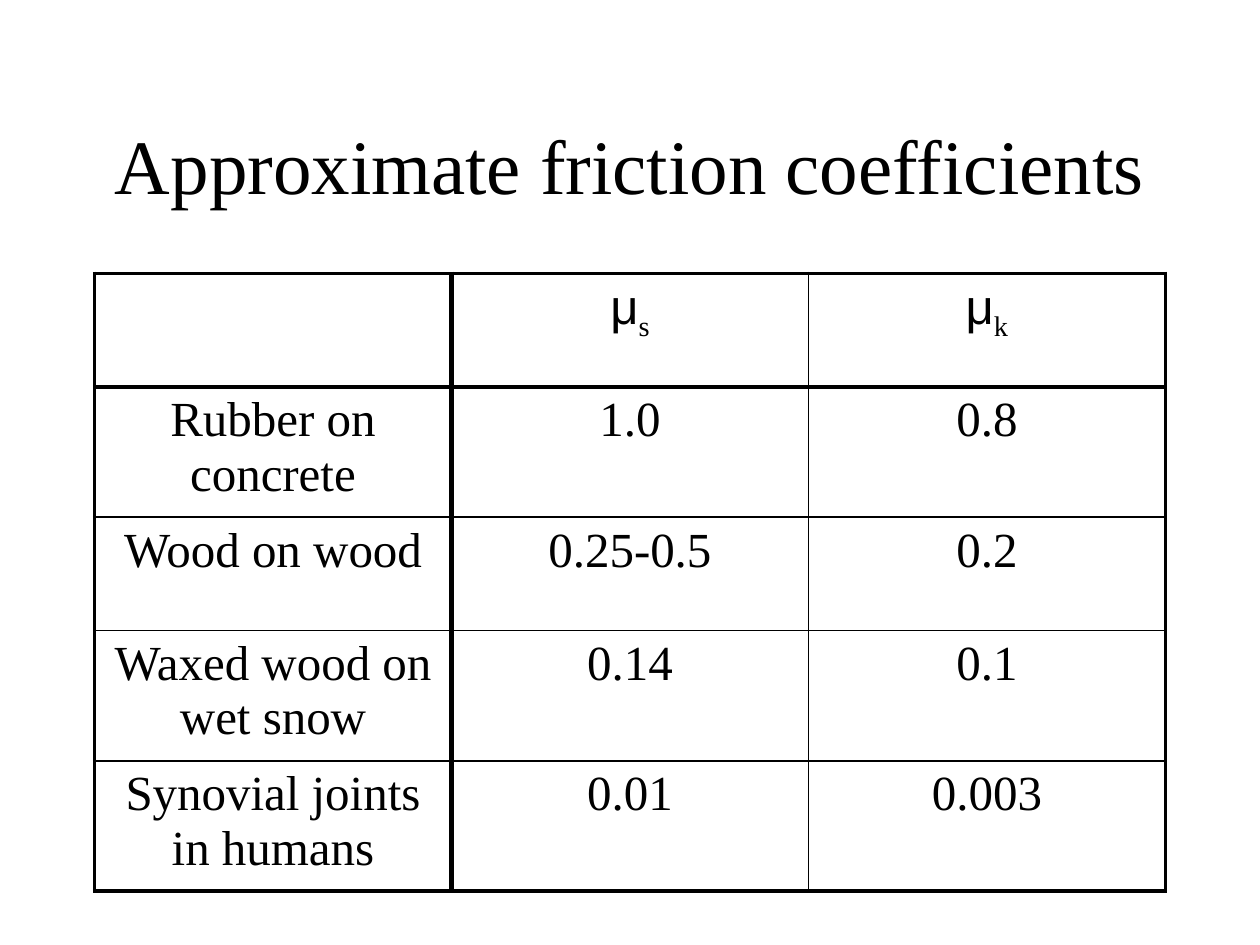
"""Build a slide with a table of approximate friction coefficients."""
import lxml.etree
import pptx
import pptx.dml.color
import pptx.enum.text
import pptx.oxml.ns
import pptx.util
from dataclasses import dataclass

Inches = pptx.util.Inches
Pt = pptx.util.Pt

TITLE = "Approximate friction coefficients"
HEADINGS = [("μ", "s"), ("μ", "k")]
MATERIALS = [
    ("Rubber on concrete", "1.0", "0.8"),
    ("Wood on wood", "0.25-0.5", "0.2"),
    ("Waxed wood on wet snow", "0.14", "0.1"),
    ("Synovial joints in humans", "0.01", "0.003"),
]


@dataclass(frozen=True)
class Theme:
    ink: str = "000000"
    body_font: str = "Times New Roman"
    symbol_font: str = "Arial"
    title_size: int = 44
    body_size: int = 28
    inner_line: float = 1
    outer_line: float = 2.25
    heading_line: float = 3


THEME = Theme()


def add_text(para, text, *, font=THEME.body_font, size=THEME.body_size, baseline=None):
    para.alignment = pptx.enum.text.PP_ALIGN.CENTER
    span = para.add_run()
    span.text = text
    span.font.name = font
    span.font.size = Pt(size)
    span.font.color.rgb = pptx.dml.color.RGBColor.from_string(THEME.ink)
    if baseline is not None:
        span.font._element.set("baseline", str(baseline * 1000))


def set_borders(cell, widths):
    qn = pptx.oxml.ns.qn
    properties = cell._tc.get_or_add_tcPr()
    for index, (side, width) in enumerate(widths.items()):
        line = lxml.etree.Element(qn(f"a:ln{side}"), w=str(Pt(width)))
        fill = lxml.etree.SubElement(line, qn("a:solidFill"))
        lxml.etree.SubElement(fill, qn("a:srgbClr"), val=THEME.ink)
        properties.insert(index, line)


def line_width(position, count):
    if position in (0, count):
        return THEME.outer_line
    return THEME.heading_line if position == 1 else THEME.inner_line


def add_title(page):
    box = page.shapes.add_textbox(Inches(0.75), Inches(0.67), Inches(8.5), Inches(1.25))
    frame = box.text_frame
    frame.word_wrap = True
    frame.vertical_anchor = pptx.enum.text.MSO_ANCHOR.MIDDLE
    add_text(frame.paragraphs[0], TITLE, size=THEME.title_size)


def add_coefficients(page):
    row_count, column_count = len(MATERIALS) + 1, len(HEADINGS) + 1
    table = page.shapes.add_table(
        row_count, column_count, Inches(0.75), Inches(2.17),
        Inches(8.5), Inches(0.9 * row_count)).table
    table.first_row = False
    table.horz_banding = False
    for row in range(row_count):
        for column in range(column_count):
            cell = table.cell(row, column)
            cell.fill.background()
            set_borders(cell, {
                "L": line_width(column, column_count),
                "R": line_width(column + 1, column_count),
                "T": line_width(row, row_count),
                "B": line_width(row + 1, row_count),
            })
            para = cell.text_frame.paragraphs[0]
            if row:
                add_text(para, MATERIALS[row - 1][column])
            elif column:
                symbol, subscript = HEADINGS[column - 1]
                add_text(para, symbol, font=THEME.symbol_font)
                add_text(para, subscript, baseline=-25)


def main():
    deck = pptx.Presentation()
    deck.slide_width, deck.slide_height = Inches(10), Inches(7.5)
    page = deck.slides.add_slide(deck.slide_layouts[6])
    add_title(page)
    add_coefficients(page)
    deck.save("out.pptx")


if __name__ == "__main__":
    main()
